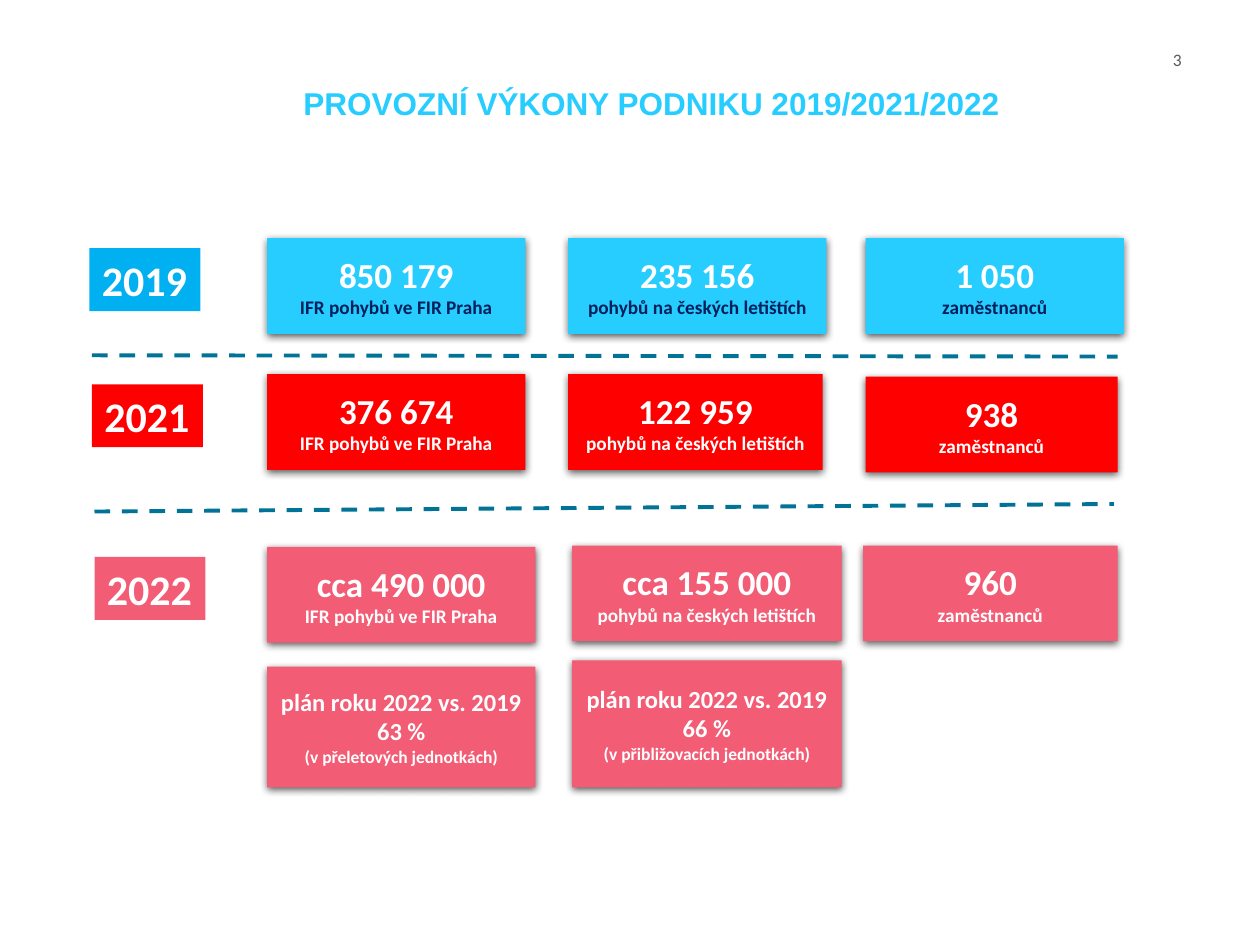
from lxml.etree import SubElement
from pptx import Presentation
from pptx.dml.color import RGBColor
from pptx.enum.dml import MSO_LINE
from pptx.enum.shapes import MSO_CONNECTOR, MSO_SHAPE
from pptx.enum.text import MSO_ANCHOR as Anchor, PP_ALIGN as Align
from pptx.oxml.ns import qn
from pptx.util import Inches, Pt

WHITE, NAVY, SKY, PINK, TEAL = "FFFFFF", "00205B", "27CDFF", "F25C74", "007396"
TITLE = "PROVOZNÍ VÝKONY PODNIKU 2019/2021/2022"
CAPTIONS = ["IFR pohybů ve FIR Praha", "pohybů na českých letištích", "zaměstnanců"]
CARD_HEIGHT = 0.76
YEARS = [
    dict(year="2019", label_at=(0.71, 1.97), label_fill="00B0F0", fill=SKY, caption=NAVY,
         values=["850 179", "235 156", "1 050"],
         cards=[(2.12, 1.89, 2.05), (4.51, 1.89, 2.05), (6.87, 1.89, 2.05)]),
    dict(year="2021", label_at=(0.73, 3.05), label_fill="FF0000", fill="FF0000", caption=WHITE,
         values=["376 674", "122 959", "938"],
         cards=[(2.12, 2.97, 2.05), (4.51, 2.97, 2.02), (6.87, 2.99, 2)]),
    dict(year="2022", label_at=(0.75, 4.42), label_fill=PINK, fill=PINK, caption=WHITE,
         values=["cca 490 000", "cca 155 000", "960"],
         cards=[(2.12, 4.34, 2.13), (4.54, 4.33, 2.14), (6.85, 4.33, 2.02)]),
]
PLANS = [
    ((2.12, 5.29, 2.13, 0.96), "63 %", "(v přeletových jednotkách)"),
    ((4.54, 5.24, 2.14, 1.01), "66 %", "(v přibližovacích jednotkách)"),
]
DIVIDERS = [(0.73, 2.82, 8.87, 2.83), (0.75, 4.06, 8.84, 4)]


def color(value):
    return RGBColor.from_string(value)


def write(box, lines, align=Align.LEFT, font="Calibri", bold=True):
    frame = box.text_frame
    for index, (text, size, ink) in enumerate(lines):
        para = frame.add_paragraph() if index else frame.paragraphs[0]
        para.text, para.alignment = text, align
        para.font.name, para.font.size, para.font.bold = font, Pt(size), bold
        para.font.color.rgb = color(ink)


def add_block(slide, area, fill):
    block = slide.shapes.add_shape(MSO_SHAPE.RECTANGLE, *map(Inches, area))
    block.shadow.inherit = False
    block.fill.solid()
    block.fill.fore_color.rgb = color(fill)
    block.line.fill.background()
    return block


def add_label(slide, area, text, fill):
    label = add_block(slide, area, fill)
    label.text_frame.word_wrap = False
    label.text_frame.vertical_anchor = Anchor.TOP
    write(label, [(text, 24, WHITE)])


def add_card(slide, area, fill, lines):
    card = add_block(slide, area, fill)
    effects = card._element.spPr.find(qn("a:effectLst"))
    shadow = SubElement(effects, qn("a:outerShdw"), blurRad=str(Pt(4.5)),
                        dist=str(Pt(1.5)), dir="5400000", rotWithShape="0")
    tint = SubElement(shadow, qn("a:srgbClr"), val="000000")
    SubElement(tint, qn("a:alpha"), val="63000")
    frame = card.text_frame
    frame.word_wrap = True
    frame.vertical_anchor = Anchor.MIDDLE
    frame.margin_left = frame.margin_right = Inches(0.08)
    frame.margin_top = frame.margin_bottom = Inches(0.08)
    write(card, lines, Align.CENTER)


def add_divider(slide, ends):
    line = slide.shapes.add_connector(MSO_CONNECTOR.STRAIGHT, *map(Inches, ends))
    line.line.color.rgb = color(TEAL)
    line.line.width = Pt(2.25)
    line.line.dash_style = MSO_LINE.DASH
    SubElement(line._element.spPr, qn("a:effectLst"))


def add_text(slide, area, line, **style):
    box = slide.shapes.add_textbox(*map(Inches, area))
    box.text_frame.word_wrap = True
    write(box, [line], **style)
    return box


def main():
    deck = Presentation()
    deck.slide_width, deck.slide_height = Inches(10), Inches(7.5)
    slide = deck.slides.add_slide(deck.slide_layouts[6])

    number = add_text(slide, (9.31, 0.34, 0.64, 0.27), ("3", 10, "5A5A5A"), bold=False)
    number.text_frame.margin_left = number.text_frame.margin_right = 0
    add_text(slide, (2.31, 0.62, 7.55, 0.44), (TITLE, 18, SKY), font="Arial")

    for ends in DIVIDERS:
        add_divider(slide, ends)
    for row in YEARS:
        add_label(slide, (*row["label_at"], 0.88, 0.5), row["year"], row["label_fill"])
        for place, value, caption in zip(row["cards"], row["values"], CAPTIONS):
            add_card(slide, (*place, CARD_HEIGHT), row["fill"],
                     [(value, 20, WHITE), (caption, 11, row["caption"])])
    for area, share, unit in PLANS:
        add_card(slide, area, PINK, [("plán roku 2022 vs. 2019", 14, WHITE),
                                     (share, 14, WHITE), (unit, 10, WHITE)])
    deck.save("out.pptx")


if __name__ == "__main__":
    main()
